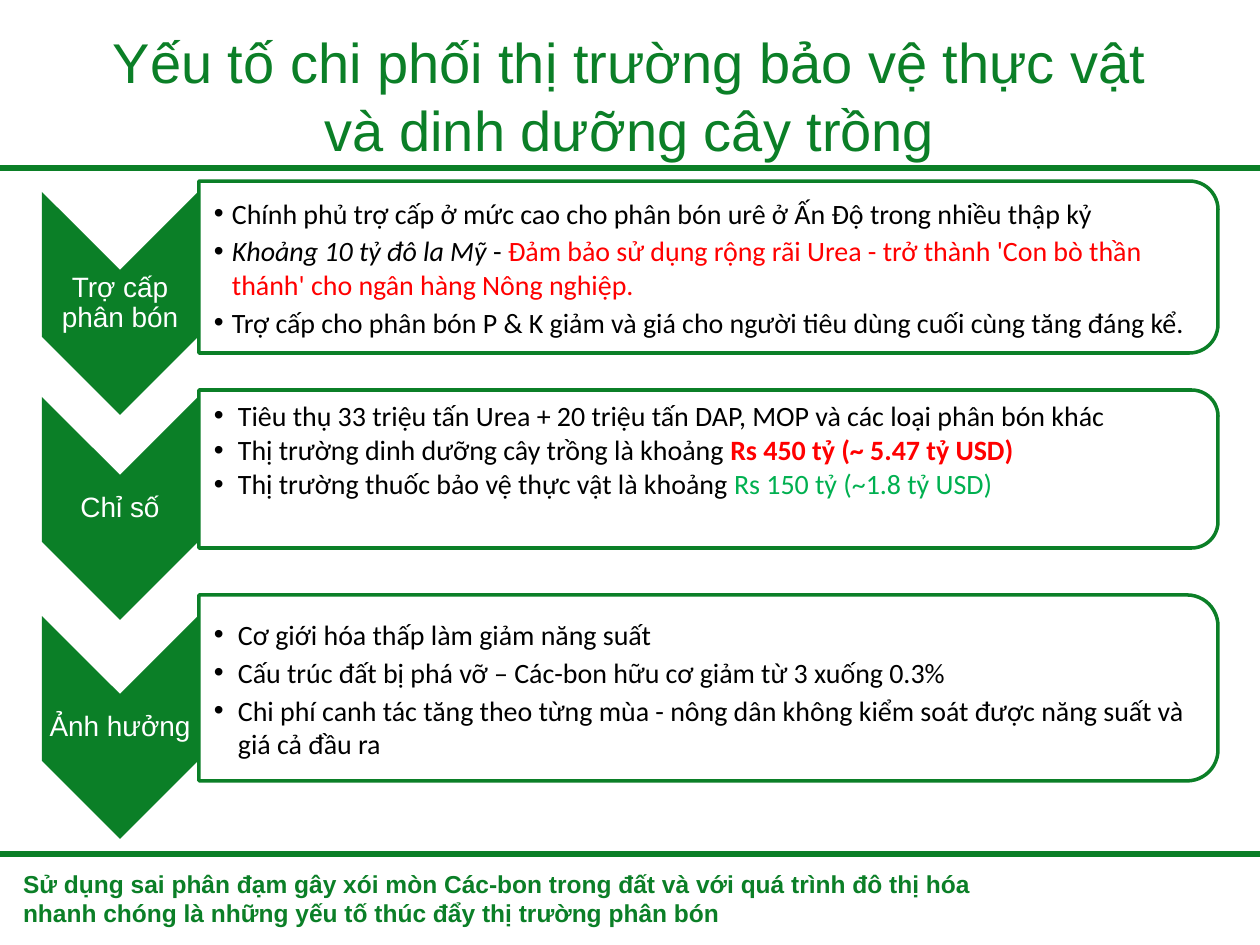
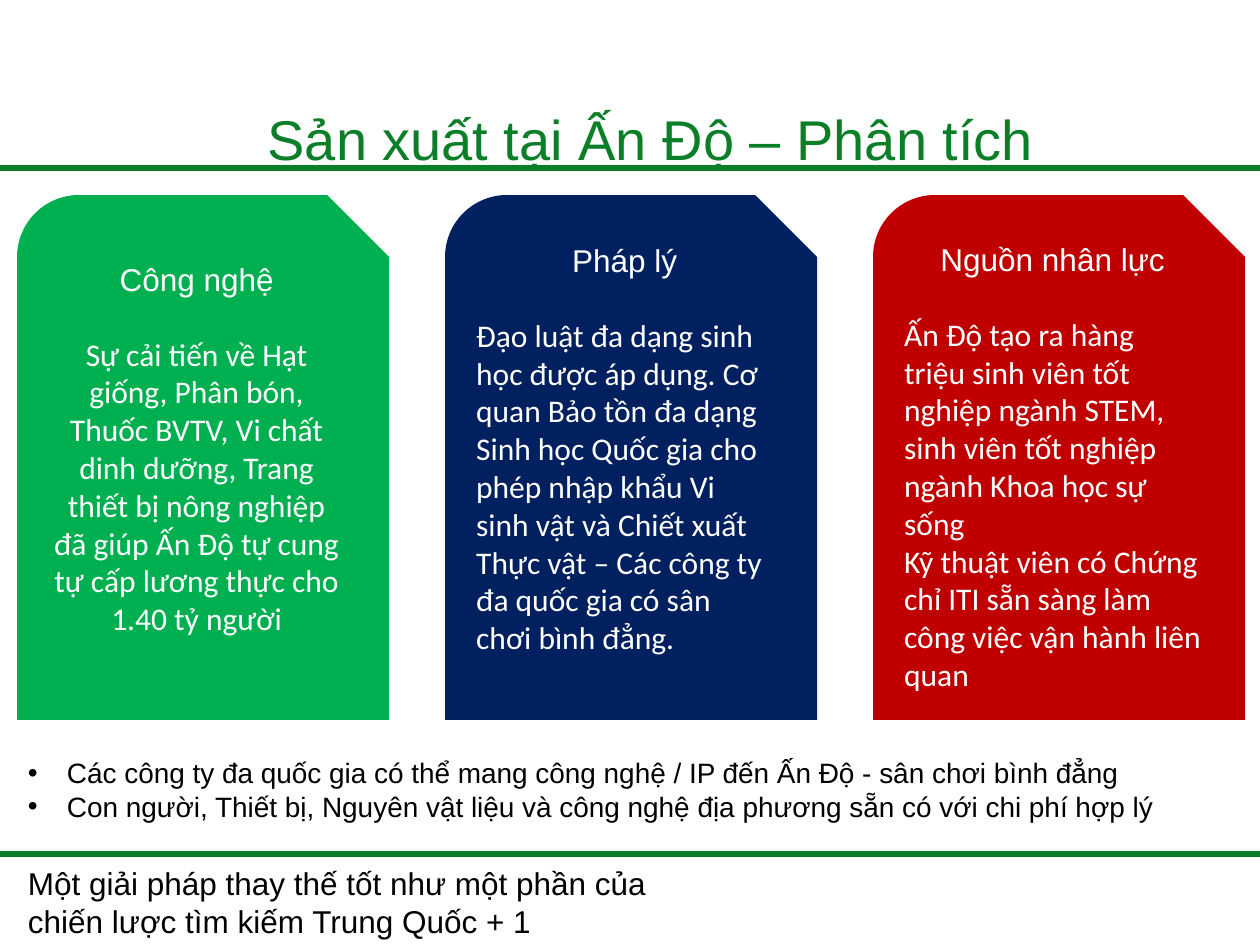
import pptx
import pptx.util
import pptx.dml.color
import pptx.enum.shapes
import pptx.enum.text
import pptx.oxml
import pptx.oxml.ns

RGB = pptx.dml.color.RGBColor
GREEN = RGB(0x0B, 0x7F, 0x27)
LIGHT = RGB(0x00, 0xB0, 0x50)
NAVY = RGB(0x00, 0x20, 0x60)
CRIMSON = RGB(0xC0, 0x00, 0x00)
RED = RGB(0xFF, 0x00, 0x00)
WHITE = RGB(0xFF, 0xFF, 0xFF)
BLACK = RGB(0x00, 0x00, 0x00)

KIND = pptx.enum.shapes.MSO_SHAPE
ALIGN = pptx.enum.text.PP_ALIGN
LEFT, CENTER = ALIGN.LEFT, ALIGN.CENTER
ANCHOR = pptx.enum.text.MSO_ANCHOR
TOP, MIDDLE = ANCHOR.TOP, ANCHOR.MIDDLE

# Content: a paragraph is a string or a list of (text, run format)
DRIVERS = {
    "title": "Yếu tố chi phối thị trường bảo vệ thực vật và dinh dưỡng cây trồng",
    "foot": "Sử dụng sai phân đạm gây xói mòn Các-bon trong đất và với quá trình "
            "đô thị hóa nhanh chóng là những yếu tố thúc đẩy thị trường phân bón",
    "rows": [
        {"label": "Trợ cấp phân bón", "arrow": 192, "panel": (181, 172),
         "text": (190, 155), "format": {"hang": 18, "inset": (15, 0, 0, 0)},
         "items": [
             "Chính phủ trợ cấp ở mức cao cho phân bón urê ở Ấn Độ trong nhiều thập kỷ",
             [("Khoảng 10 tỷ đô la Mỹ ", {"italic": True}), ("- ", {}),
              ("Đảm bảo sử dụng rộng rãi Urea - trở thành 'Con bò thần thánh' "
               "cho ngân hàng Nông nghiệp.", {"color": RED})],
             "Trợ cấp cho phân bón P & K giảm và giá cho người tiêu dùng cuối cùng "
             "tăng đáng kể."]},
        {"label": "Chỉ số", "arrow": 397, "panel": (390, 158),
         "text": (401, 140), "format": {"line": 0.9, "anchor": TOP},
         "items": [
             "Tiêu thụ 33 triệu tấn Urea + 20 triệu tấn DAP, MOP và các loại phân bón khác",
             [("Thị trường dinh dưỡng cây trồng là khoảng ", {}),
              ("Rs 450 tỷ (~ 5.47 tỷ USD)", {"color": RED, "bold": True})],
             [("Thị trường thuốc bảo vệ thực vật là khoảng ", {}),
              ("Rs 150 tỷ (~1.8 tỷ USD)", {"color": LIGHT})]]},
        {"label": "Ảnh hưởng", "arrow": 616, "panel": (595, 186),
         "text": (605, 168), "format": {},
         "items": [
             "Cơ giới hóa thấp làm giảm năng suất",
             "Cấu trúc đất bị phá vỡ – Các-bon hữu cơ giảm từ 3 xuống 0.3%",
             "Chi phí canh tác tăng theo từng mùa - nông dân không kiểm soát được "
             "năng suất và giá cả đầu ra"]},
    ],
}

INDIA = {
    "title": "Sản xuất tại Ấn Độ – Phân tích",
    "cards": [
        {"head": "Công nghệ", "fill": LIGHT, "align": CENTER, "below": 42, "body": [
            "Sự cải tiến về Hạt giống, Phân bón, Thuốc BVTV, Vi chất dinh dưỡng, "
            "Trang thiết bị nông nghiệp đã giúp Ấn Độ tự cung tự cấp lương thực "
            "cho 1.40 tỷ người"]},
        {"head": "Pháp lý", "fill": NAVY, "align": LEFT, "below": 42, "body": [
            "Đạo luật đa dạng sinh học được áp dụng. Cơ quan Bảo tồn đa dạng Sinh học "
            "Quốc gia cho phép nhập khẩu Vi sinh vật và Chiết xuất Thực vật – Các "
            "công ty đa quốc gia có sân chơi bình đẳng."]},
        {"head": "Nguồn nhân lực", "fill": CRIMSON, "align": LEFT, "below": 6, "body": [
            "Ấn Độ tạo ra hàng triệu sinh viên tốt nghiệp ngành STEM, sinh viên "
            "tốt nghiệp ngành Khoa học sự sống",
            "Kỹ thuật viên có Chứng chỉ ITI sẵn sàng làm công việc vận hành liên quan"]},
    ],
    "notes": [
        "Các công ty đa quốc gia có thể mang công nghệ / IP đến Ấn Độ - sân chơi bình đẳng",
        "Con người, Thiết bị, Nguyên vật liệu và công nghệ địa phương sẵn có với "
        "chi phí hợp lý"],
    "foot": "Một giải pháp thay thế tốt như một phần của\n"
            "chiến lược tìm kiếm Trung Quốc + 1",
}

# Layout in px
WIDE, HIGH = 1260, 945
RULES = (168, 854)
ARROW = (42, 156, 223)      # left, width, height as seen
PANEL = (199, 1019)         # left, width as seen
CARD = (17, 195, 372, 525)  # first card
PITCH = 428


def px(n):
    return pptx.util.Emu(round(n * 914400 / 126))


def add_text(shape, paras, size=16, font="Arial", color=BLACK, bold=False, align=LEFT,
             anchor=MIDDLE, inset=(13, 6, 13, 6), line=None, after=0, hang=0, more=False):
    """Write paragraphs into a shape; hang gives bullets, more keeps what is there."""
    frame = shape.text_frame
    frame.word_wrap = True
    frame.vertical_anchor = anchor
    (frame.margin_left, frame.margin_top,
     frame.margin_right, frame.margin_bottom) = map(px, inset)
    for i, runs in enumerate(paras):
        para = frame.add_paragraph() if more or i else frame.paragraphs[0]
        if hang:
            props = para._p.get_or_add_pPr()
            props.set("marL", str(px(hang)))
            props.set("indent", str(-px(hang)))
            for tag in ('buFont %s typeface="Arial"', 'buChar %s char="•"'):
                props.append(pptx.oxml.parse_xml(
                    "<a:" + tag % pptx.oxml.ns.nsdecls("a") + "/>"))
        para.alignment = align
        para.space_before = pptx.util.Pt(0)
        para.space_after = pptx.util.Pt(after)
        if line:
            para.line_spacing = line
        for words, look in [(runs, {})] if isinstance(runs, str) else runs:
            for j, part in enumerate(words.split("\n")):
                if j:
                    para.add_line_break()
                run = para.add_run()
                run.text = part
                run.font.name = font
                run.font.size = pptx.util.Pt(size)
                run.font.bold = look.get("bold", bold)
                run.font.italic = look.get("italic", False)
                run.font.color.rgb = look.get("color", color)


def add_box(slide, area, paras, **format):
    add_text(slide.shapes.add_textbox(*map(px, area)), paras, **format)


def add_form(slide, kind, area, fill, edge=None, turned=False):
    """Add a preset shape; a turned one fills the area after a quarter turn."""
    x, y, w, h = area
    if turned:
        x, y, w, h = x + (w - h) / 2, y + (h - w) / 2, h, w
    shape = slide.shapes.add_shape(kind, *map(px, (x, y, w, h)))
    shape.rotation = 90 if turned else 0
    shape.shadow.inherit = False
    shape.fill.solid()
    shape.fill.fore_color.rgb = fill
    if edge:
        shape.line.color.rgb = edge
        shape.line.width = pptx.util.Pt(2)
    else:
        shape.line.fill.background()
    return shape


def add_slide(deck, title, x, y):
    """Start a slide with the two green rules and its title."""
    slide = deck.slides.add_slide(deck.slide_layouts[6])
    for level in RULES:
        rule = slide.shapes.add_connector(
            pptx.enum.shapes.MSO_CONNECTOR.STRAIGHT, 0, px(level), px(WIDE), px(level))
        rule.line.color.rgb = GREEN
        rule.line.width = pptx.util.Pt(3)
        rule._element.spPr.append(pptx.oxml.parse_xml(
            "<a:effectLst %s/>" % pptx.oxml.ns.nsdecls("a")))
    add_box(slide, (x, y, 1134, 158), [title], size=32, color=GREEN, align=CENTER)
    return slide


def draw_drivers(deck):
    slide = add_slide(deck, DRIVERS["title"], 63, 16)
    left, wide, high = ARROW
    for row in DRIVERS["rows"]:
        # Arrow and its label
        top = row["arrow"]
        add_form(slide, KIND.CHEVRON, (left, top, wide, high), GREEN, turned=True)
        add_box(slide, (left, top + wide / 2, wide, high - wide), [row["label"]],
                color=WHITE, align=CENTER, line=0.9, inset=(1, 1, 1, 1))
        # Panel and its bullets
        y, tall = row["panel"]
        add_form(slide, KIND.ROUND_2_SAME_RECTANGLE, (PANEL[0], y, PANEL[1], tall),
                 WHITE, edge=GREEN, turned=True)
        y, tall = row["text"]
        look = {"hang": 24, "inset": (15, 1, 1, 1)} | row["format"]
        add_box(slide, (PANEL[0], y, 1011, tall), row["items"],
                font="Calibri", after=2.4, **look)
    add_box(slide, (10, 819, 987, 158), [DRIVERS["foot"]], size=14, color=GREEN, bold=True)


def draw_india(deck):
    slide = add_slide(deck, INDIA["title"], 84, 59)
    x, y, w, h = CARD
    for i, card in enumerate(INDIA["cards"]):
        shape = add_form(slide, KIND.SNIP_ROUND_RECTANGLE, (x + i * PITCH, y, w, h),
                         card["fill"])
        look = {"size": 18, "color": WHITE, "inset": (13, 6, 13, card["below"])}
        add_text(shape, [card["head"]], align=CENTER, after=21, **look)
        add_text(shape, card["body"], font="Calibri", align=card["align"], more=True, **look)
    # Notes above and below the lower rule
    add_box(slide, (15, 750, 1226, 84), INDIA["notes"], hang=39, anchor=TOP)
    add_box(slide, (15, 858, 1226, 87), [INDIA["foot"]], size=18, anchor=TOP)


def main():
    deck = pptx.Presentation()
    deck.slide_width, deck.slide_height = px(WIDE), px(HIGH)
    draw_drivers(deck)
    draw_india(deck)
    deck.save("out.pptx")


if __name__ == "__main__":
    main()
